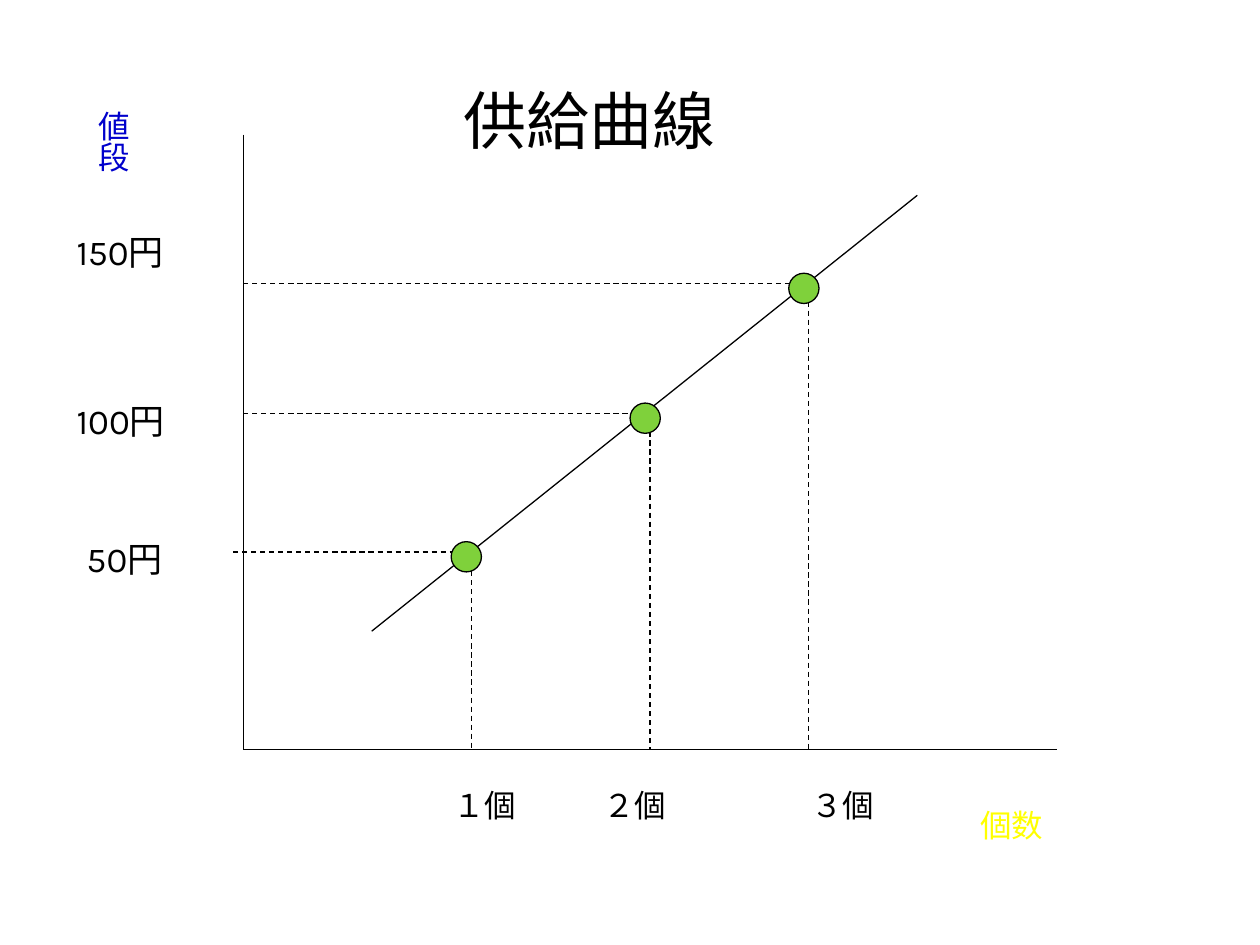
import pptx
import pptx.dml.color
import pptx.enum.dml
import pptx.enum.shapes
import pptx.enum.text
import pptx.oxml.ns
import pptx.util
from lxml import etree

Pt = pptx.util.Pt
FONT = "Karla"
COLORS = {"ink": "000000", "price": "0000CC", "quantity": "FFFF00",
          "dot": "7FD13B", "paper": "FFFFFF"}
LINE_WIDTH = 0.75
DOT_SIZE = 17.3
# Each dot sits slightly left of and below the corner of its guides
DOT_SHIFT = (-2.8, 2.8)

# Quantity, price, guide corner (x, y) from the top left of the plot,
# start of the horizontal guide, gap above the vertical guide
SUPPLY_POINTS = [
    ("２個", "100円", 232.5, 159.2, 0, 0),
    ("１個", "50円", 130.3, 238.4, -5.8, 5.8),
    ("３個", "150円", 323.2, 85, 0, 0),
]
# Label boxes: left, top, width, height
QUANTITY_BOXES = {"１個": (252, 445.7, 73.4, 28.8),
                  "２個": (337.7, 445.7, 85, 28.8),
                  "３個": (456.5, 445.7, 73.4, 28.8)}
PRICE_BOXES = {"100円": (36.7, 224.6, 85, 31),
               "50円": (42.5, 303.8, 96.5, 31),
               "150円": (36.7, 128.2, 85, 31)}


def color(name):
    return pptx.dml.color.RGBColor.from_string(COLORS[name])


def add_line(slide, start, end, dashed=False):
    line = slide.shapes.add_connector(
        pptx.enum.shapes.MSO_CONNECTOR.STRAIGHT,
        *(Pt(value) for value in (*start, *end)))
    line.line.color.rgb = color("ink")
    line.line.width = Pt(LINE_WIDTH)
    if dashed:
        line.line.dash_style = pptx.enum.dml.MSO_LINE.DASH
    etree.SubElement(line._element.spPr, pptx.oxml.ns.qn("a:effectLst"))


def add_label(slide, box, text, size, ink="ink", vertical=False):
    label = slide.shapes.add_textbox(*(Pt(value) for value in box))
    frame = label.text_frame
    frame.word_wrap = True
    frame.auto_size = pptx.enum.text.MSO_AUTO_SIZE.SHAPE_TO_FIT_TEXT
    if vertical:
        frame._txBody.bodyPr.set("vert", "eaVert")
    frame.text = text
    font = frame.paragraphs[0].runs[0].font
    font.name = FONT
    font.size = Pt(size)
    font.color.rgb = color(ink)


def add_axes(slide, box):
    left, top, width, height = box
    origin = (left, top + height)
    add_line(slide, (left, top), origin)
    add_line(slide, origin, (left + width, top + height))


def add_supply_curve(slide, box):
    left, top, _, height = box
    add_line(slide, (left + 73.4, top + 283.7), (left + 385.2, top + 34.6))
    # Dashed guides from each point to both axes
    for _, _, x, y, start, gap in SUPPLY_POINTS:
        add_line(slide, (left + start, top + y), (left + x, top + y), True)
        add_line(slide, (left + x, top + y + gap), (left + x, top + height), True)


def add_dots(slide, box):
    left, top = box[:2]
    for _, _, x, y, _, _ in SUPPLY_POINTS:
        dot = slide.shapes.add_shape(
            pptx.enum.shapes.MSO_SHAPE.OVAL,
            Pt(left + x + DOT_SHIFT[0] - DOT_SIZE / 2),
            Pt(top + y + DOT_SHIFT[1] - DOT_SIZE / 2),
            Pt(DOT_SIZE), Pt(DOT_SIZE))
        dot.shadow.inherit = False
        dot.fill.solid()
        dot.fill.fore_color.rgb = color("dot")
        dot.line.color.rgb = color("ink")
        dot.line.width = Pt(LINE_WIDTH)


def add_labels(slide):
    # Axis names
    add_label(slide, (553, 457.2, 124.6, 28.8), "個数", 18, "quantity")
    add_label(slide, (42.5, 56.2, 36.7, 124.6), "値段", 18, "price", True)
    # Axis values
    for text, box in QUANTITY_BOXES.items():
        add_label(slide, box, text, 18)
    for text, box in PRICE_BOXES.items():
        add_label(slide, box, text, 20)
    # Title
    add_label(slide, (257.8, 43.2, 187.2, 50.4), "供給曲線", 36)


def main():
    presentation = pptx.Presentation()
    presentation.slide_width, presentation.slide_height = Pt(720), Pt(540)
    slide = presentation.slides.add_slide(presentation.slide_layouts[6])
    slide.background.fill.solid()
    slide.background.fill.fore_color.rgb = color("paper")
    plot = (139, 77, 465, 351.4)
    add_axes(slide, plot)
    add_supply_curve(slide, plot)
    add_labels(slide)
    add_dots(slide, plot)
    presentation.save("out.pptx")


if __name__ == "__main__":
    main()
